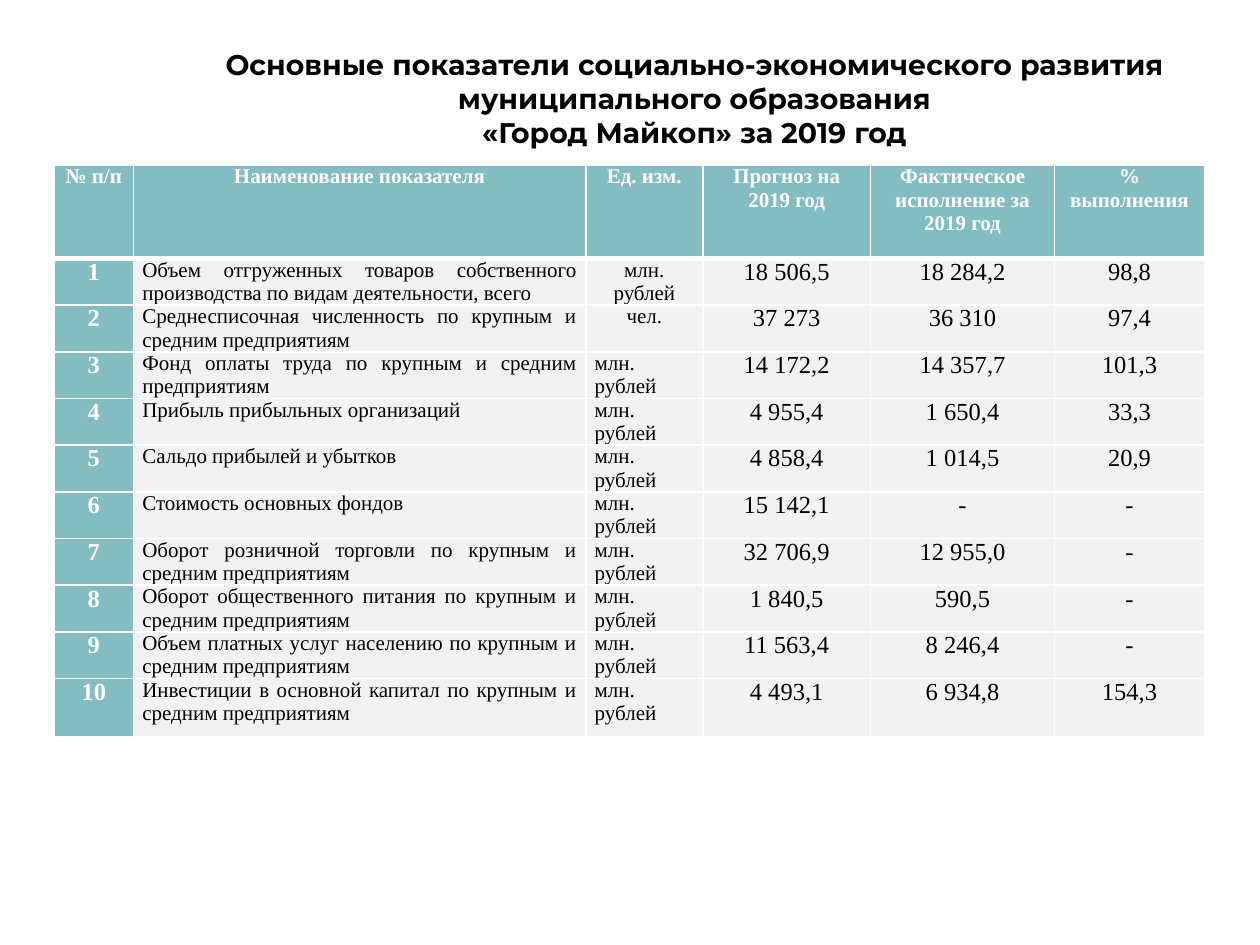
from lxml.etree import SubElement
from pptx import Presentation
from pptx.dml.color import RGBColor
from pptx.enum.text import MSO_ANCHOR, MSO_AUTO_SIZE, PP_ALIGN as Align
from pptx.oxml.ns import qn
from pptx.util import Cm, Pt

TEAL, GREY, WHITE, BLACK = "83BCC1", "F2F2F2", "FFFFFF", "000000"
TABLE_FONT = "Times New Roman"

TITLE = ("Основные показатели социально-экономического развития "
         "муниципального образования\v«Город Майкоп» за 2019 год")
HEADERS = ["№ п/п", "Наименование показателя", "Ед. изм.", "Прогноз на 2019 год",
           "Фактическое исполнение за 2019 год", "% выполнения"]
MONEY = "млн. рублей"
INDICATORS = [
    ("Объем отгруженных товаров собственного производства по видам деятельности, всего",
     MONEY, "18 506,5", "18 284,2", "98,8"),
    ("Среднесписочная численность по крупным и средним предприятиям",
     "чел.", "37 273", "36 310", "97,4"),
    ("Фонд оплаты труда по крупным и средним предприятиям",
     MONEY, "14 172,2", "14 357,7", "101,3"),
    ("Прибыль прибыльных организаций", MONEY, "4 955,4", "1 650,4", "33,3"),
    ("Сальдо прибылей и убытков", MONEY, "4 858,4", "1 014,5", "20,9"),
    ("Стоимость основных фондов", MONEY, "15 142,1", "-", "-"),
    ("Оборот розничной торговли по крупным и средним предприятиям",
     MONEY, "32 706,9", "12 955,0", "-"),
    ("Оборот общественного питания по крупным и средним предприятиям",
     MONEY, "1 840,5", "590,5", "-"),
    ("Объем платных услуг населению по крупным и средним предприятиям",
     MONEY, "11 563,4", "8 246,4", "-"),
    ("Инвестиции в основной капитал по крупным и средним предприятиям",
     MONEY, "4 493,1", "6 934,8", "154,3"),
]
COLUMN_WIDTHS = [1.6, 9.12, 2.36, 3.38, 3.71, 3.02]
HEADER_HEIGHT, ROW_HEIGHT, LAST_HEIGHT = 1.88, 0.92, 1.17
NAME_COLUMN, UNIT_COLUMN = 1, 2
CENTRED_UNIT_ROWS = 2


def color(value):
    return RGBColor.from_string(value)


def format_text(text_frame, font_name, size, text_color, bold, align):
    for paragraph in text_frame.paragraphs:
        paragraph.alignment = align
        for run in paragraph.runs:
            font = run.font
            font.name, font.size, font.bold = font_name, Pt(size), bold
            font.color.rgb = color(text_color)


def set_borders(cell, bottom_width):
    properties = cell._tc.get_or_add_tcPr()
    for side in "LRTB":
        width = bottom_width if side == "B" else 1
        line = SubElement(properties, qn(f"a:ln{side}"), w=str(Pt(width)))
        fill = SubElement(line, qn("a:solidFill"))
        SubElement(fill, qn("a:srgbClr"), val=WHITE)


def fill_cell(cell, text, size, align, accent, bottom_width=1):
    cell.margin_left = cell.margin_right = Cm(0.18)
    cell.margin_top = cell.margin_bottom = 0
    set_borders(cell, bottom_width)
    cell.fill.solid()
    cell.fill.fore_color.rgb = color(TEAL if accent else GREY)
    cell.text_frame.text = text
    format_text(cell.text_frame, TABLE_FONT, size,
                WHITE if accent else BLACK, accent, align)


def place_title(slide, left, top, width, height):
    title = slide.shapes.title
    title.left, title.top = Cm(left), Cm(top)
    title.width, title.height = Cm(width), Cm(height)
    text_frame = title.text_frame
    text_frame.text = TITLE
    text_frame.word_wrap = True
    text_frame.auto_size = MSO_AUTO_SIZE.NONE
    text_frame.vertical_anchor = MSO_ANCHOR.BOTTOM
    text_frame.margin_left = text_frame.margin_right = Cm(0.2)
    format_text(text_frame, "Montserrat", 16.2, BLACK, True, Align.CENTER)


def place_table(slide, left, top):
    heights = [HEADER_HEIGHT] + [ROW_HEIGHT] * (len(INDICATORS) - 1) + [LAST_HEIGHT]
    table = slide.shapes.add_table(
        len(heights), len(COLUMN_WIDTHS), Cm(left), Cm(top),
        Cm(sum(COLUMN_WIDTHS)), Cm(sum(heights))).table
    for column, width in zip(table.columns, COLUMN_WIDTHS):
        column.width = Cm(width)
    for row, height in zip(table.rows, heights):
        row.height = Cm(height)

    # Header row
    for column, text in enumerate(HEADERS):
        fill_cell(table.cell(0, column), text, 12, Align.CENTER, True, bottom_width=3)

    # Numbered indicator rows
    for number, indicator in enumerate(INDICATORS, start=1):
        for column, text in enumerate((str(number), *indicator)):
            align = Align.CENTER
            if column == NAME_COLUMN:
                align = Align.JUSTIFY
            elif column == UNIT_COLUMN and number > CENTRED_UNIT_ROWS:
                align = Align.LEFT
            size = 12 if column in (NAME_COLUMN, UNIT_COLUMN) else 14
            fill_cell(table.cell(number, column), text, size, align, column == 0)


def main():
    presentation = Presentation()
    presentation.slide_width, presentation.slide_height = Cm(25.4), Cm(19.05)
    slide = presentation.slides.add_slide(presentation.slide_layouts[5])
    place_title(slide, 4.29, 0.74, 19.41, 2.39)
    place_table(slide, 1.09, 3.33)
    presentation.save("out.pptx")


if __name__ == "__main__":
    main()
